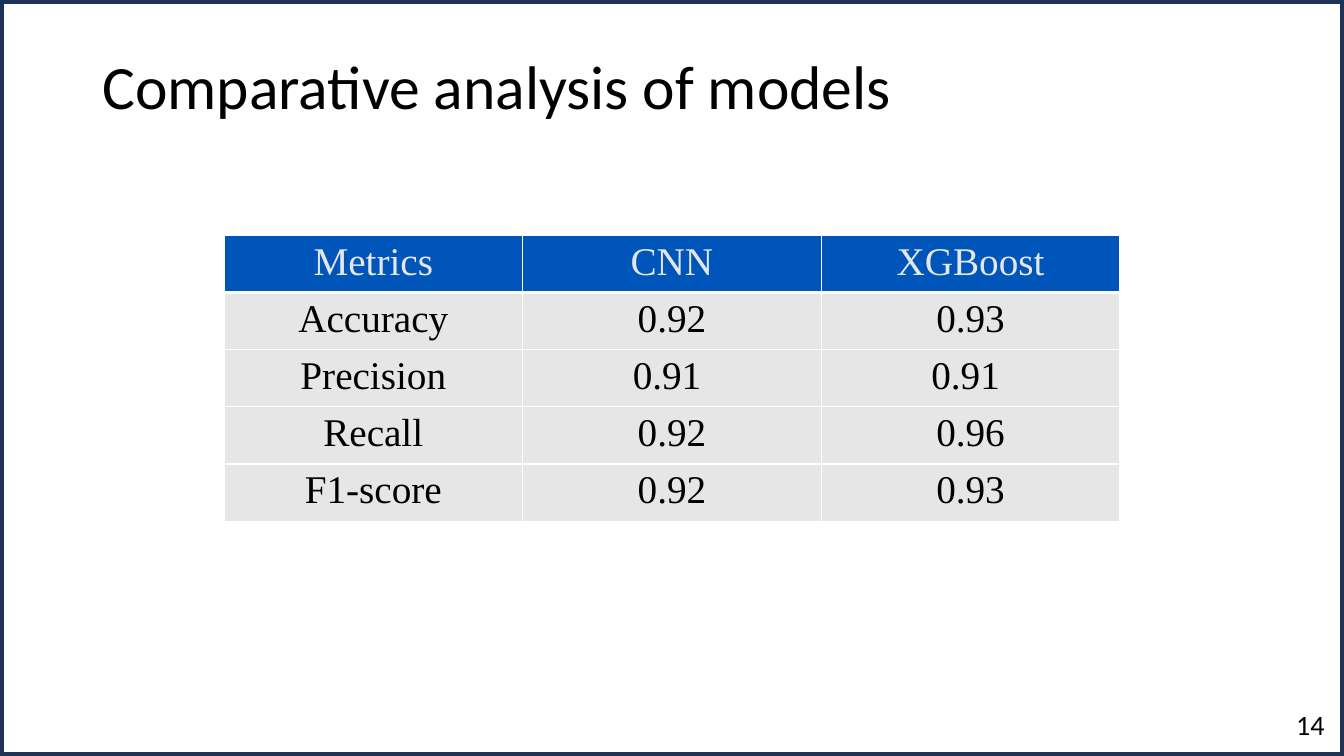
import pptx
import pptx.dml.color
import pptx.enum.shapes
import pptx.enum.text
import pptx.oxml
import pptx.oxml.ns
import pptx.util
from dataclasses import dataclass

Pt = pptx.util.Pt
TITLE = "Comparative analysis of models"
PAGE_NUMBER = "14"
METRICS = [
    ("Metrics", "CNN", "XGBoost"),
    ("Accuracy", "0.92", "0.93"),
    ("Precision", "0.91 ", "0.91 "),
    ("Recall", "0.92", "0.96"),
    ("F1-score", "0.92", "0.93"),
]


@dataclass(frozen=True)
class Theme:
    sans: str = "Calibri"
    serif: str = "Times New Roman"
    title_size: int = 44
    table_size: int = 28
    number_size: int = 20
    ink: str = "000000"
    header_ink: str = "E5E6E7"
    header_fill: str = "0055BB"
    body_fill: str = "E6E6E6"
    grid: str = "FFFFFF"
    frame: str = "1E3256"


THEME = Theme()
SLIDE_W, SLIDE_H = 960, 540
TABLE_TOP, TABLE_W, ROW_H = 168, 640, 38.2
TABLE_LEFT = (SLIDE_W - TABLE_W) / 2


def rgb(color):
    return pptx.dml.color.RGBColor.from_string(color)


def style_font(p, name, size, color):
    p.font.name = name
    p.font.size = Pt(size)
    p.font.color.rgb = rgb(color)


def add_text(s, box, text, size):
    tf = s.shapes.add_textbox(*map(Pt, box)).text_frame
    p = tf.paragraphs[0]
    p.text = text
    style_font(p, THEME.sans, size, THEME.ink)
    return tf


def set_borders(cell, bottom):
    """Rule all four sides of a cell, with its own width at the bottom."""
    tc_pr = cell._tc.get_or_add_tcPr()
    for side, width in (("L", 1), ("R", 1), ("T", 1), ("B", bottom)):
        tc_pr.append(pptx.oxml.parse_xml(
            f'<a:ln{side} {pptx.oxml.ns.nsdecls("a")} w="{Pt(width)}">'
            f'<a:solidFill><a:srgbClr val="{THEME.grid}"/></a:solidFill></a:ln{side}>'))


def add_metrics_table(s):
    rows, cols = len(METRICS), len(METRICS[0])
    table = s.shapes.add_table(rows, cols, Pt(TABLE_LEFT), Pt(TABLE_TOP),
                               Pt(TABLE_W), Pt(ROW_H * rows)).table
    table.horz_banding = False
    for i, values in enumerate(METRICS):
        table.rows[i].height = Pt(ROW_H)
        header = i == 0
        for j, value in enumerate(values):
            cell = table.cell(i, j)
            set_borders(cell, 3 if header else 1)
            cell.fill.solid()
            cell.fill.fore_color.rgb = rgb(THEME.header_fill if header else THEME.body_fill)
            p = cell.text_frame.paragraphs[0]
            p.text = value
            p.alignment = pptx.enum.text.PP_ALIGN.CENTER
            style_font(p, THEME.serif, THEME.table_size,
                       THEME.header_ink if header else THEME.ink)
            p.font.bold = False


def add_frame(s):
    sp = s.shapes.add_shape(pptx.enum.shapes.MSO_SHAPE.RECTANGLE,
                            0, 0, Pt(SLIDE_W), Pt(SLIDE_H))
    sp.shadow.inherit = False
    sp.fill.background()
    sp.line.color.rgb = rgb(THEME.frame)
    sp.line.width = Pt(6)


def main():
    prs = pptx.Presentation()
    prs.slide_width, prs.slide_height = Pt(SLIDE_W), Pt(SLIDE_H)
    s = prs.slides.add_slide(prs.slide_layouts[6])

    tf = add_text(s, (66, 11.5, 828, 104.4), TITLE, THEME.title_size)
    tf.word_wrap = True
    tf.vertical_anchor = pptx.enum.text.MSO_ANCHOR.MIDDLE
    tf.paragraphs[0].line_spacing = 0.9

    add_metrics_table(s)
    add_frame(s)

    tf = add_text(s, (918.7, 501.8, 35.3, 31.7), PAGE_NUMBER, THEME.number_size)
    tf.word_wrap = False
    tf.auto_size = pptx.enum.text.MSO_AUTO_SIZE.SHAPE_TO_FIT_TEXT

    prs.save("out.pptx")


if __name__ == "__main__":
    main()
